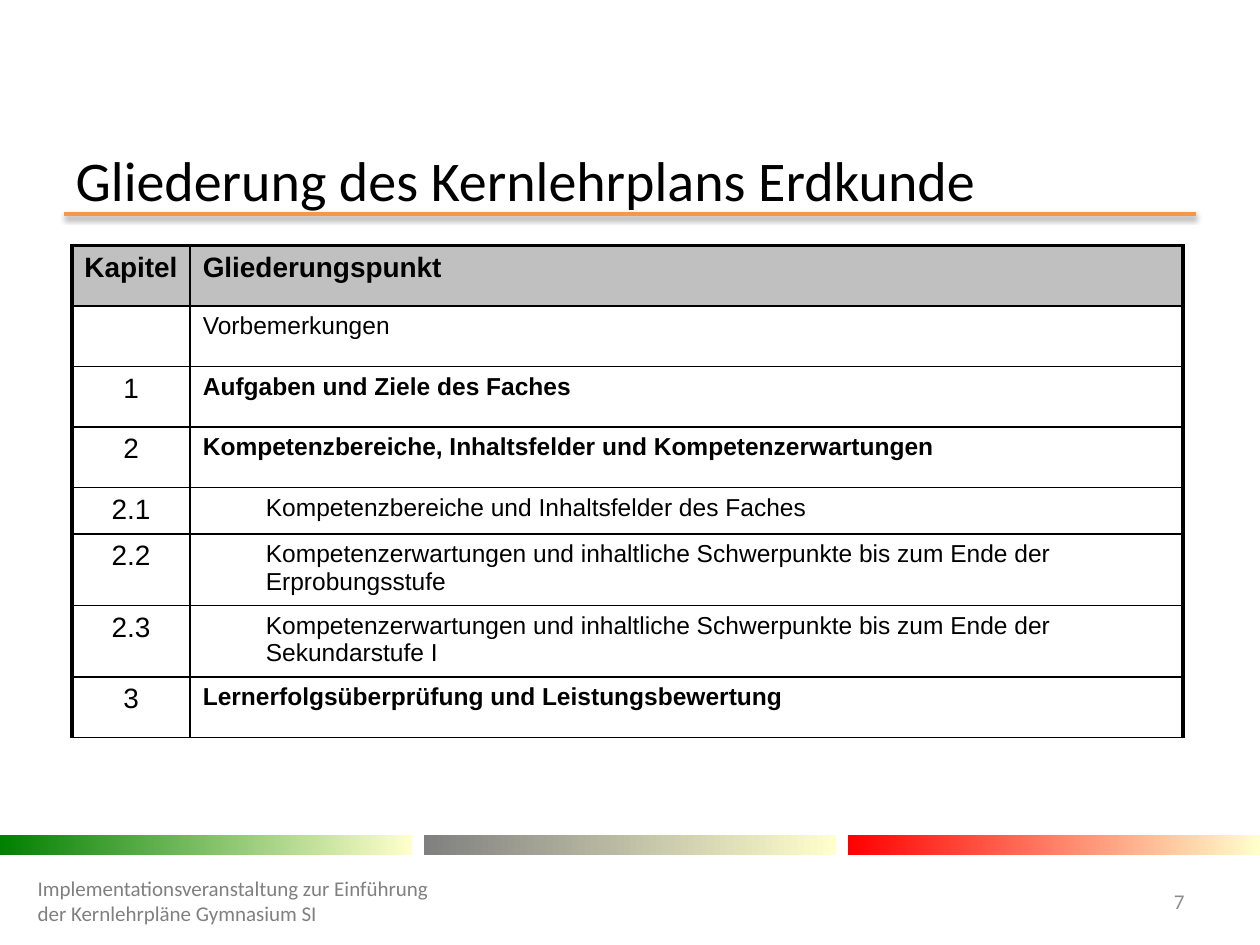
import pptx
import pptx.dml.color
import pptx.enum.shapes
import pptx.enum.text
import pptx.oxml
import pptx.oxml.ns
import pptx.util

Inches = pptx.util.Inches
Pt = pptx.util.Pt
ALIGN = pptx.enum.text.PP_ALIGN
ANCHOR = pptx.enum.text.MSO_ANCHOR

COLORS = {
    "text": "000000", "rule": "F79646", "header": "C0C0C0",
    "footer": "808080", "number": "8C8C8C", "green": "008000",
    "gray": "808080", "red": "FF0000", "cream": "FFFFCC",
}
ROWS = [
    ("Kapitel", "Gliederungspunkt", "header", 0.48),
    ("", "Vorbemerkungen", "plain", 0.48),
    ("1", "Aufgaben und Ziele des Faches", "chapter", 0.48),
    ("2", "Kompetenzbereiche, Inhaltsfelder und Kompetenzerwartungen", "chapter", 0.48),
    ("2.1", "Kompetenzbereiche und Inhaltsfelder des Faches", "section", 0.37),
    ("2.2", "Kompetenzerwartungen und inhaltliche Schwerpunkte bis zum Ende der "
            "Erprobungsstufe", "section", 0.54),
    ("2.3", "Kompetenzerwartungen und inhaltliche Schwerpunkte bis zum Ende der "
            "Sekundarstufe I", "section", 0.54),
    ("3", "Lernerfolgsüberprüfung und Leistungsbewertung", "chapter", 0.48),
]


def rgb(name):
    """Return the named palette colour."""
    return pptx.dml.color.RGBColor.from_string(COLORS[name])


def element(xml):
    """Parse a DrawingML element given without its namespace declaration."""
    declaration = " " + pptx.oxml.ns.nsdecls("a")
    end = min(xml.index(mark) for mark in " />" if mark in xml)
    return pptx.oxml.parse_xml(xml[:end] + declaration + xml[end:])


def write(frame, text, size, color="text", font="Calibri", bold=False, align=ALIGN.LEFT):
    """Write one formatted run into a text frame and return its paragraph."""
    para = frame.paragraphs[0]
    para.alignment = align
    span = para.add_run()
    span.text = text
    span.font.size = Pt(size)
    span.font.name = font
    span.font.bold = bold
    span.font.color.rgb = rgb(color)
    return para


def add_heading(page, left, top, width, height):
    """Place the title and the shadowed rule below it."""
    box = page.shapes.title
    box.left, box.top, box.width, box.height = left, top, width, height
    frame = box.text_frame
    frame.word_wrap = True
    frame.auto_size = pptx.enum.text.MSO_AUTO_SIZE.NONE
    frame.vertical_anchor = ANCHOR.MIDDLE
    write(frame, "Gliederung des Kernlehrplans Erdkunde", 32)
    rule_top = Inches(1.7)
    rule = page.shapes.add_connector(
        pptx.enum.shapes.MSO_CONNECTOR.STRAIGHT,
        left + Inches(0.01), rule_top, left + width - Inches(0.01), rule_top)
    rule.line.color.rgb = rgb("rule")
    rule.line.width = Pt(2)
    rule._element.spPr.append(element(
        f'<a:effectLst><a:outerShdw blurRad="{Pt(3.1)}" dist="{Pt(1.6)}" dir="5400000" '
        'rotWithShape="0"><a:srgbClr val="000000"><a:alpha val="38000"/></a:srgbClr>'
        '</a:outerShdw></a:effectLst>'))


def set_borders(cell, column, row):
    """Draw thick lines on the left, top and right of the table, thin ones elsewhere."""
    widths = {"L": 1 if column else 2.25, "R": 2.25 if column else 1,
              "T": 1 if row else 2.25, "B": 1}
    properties = cell._tc.get_or_add_tcPr()
    for position, (side, width) in enumerate(widths.items()):
        properties.insert(position, element(
            f'<a:ln{side} w="{Pt(width)}"><a:solidFill><a:srgbClr val="{COLORS["text"]}"/>'
            f'</a:solidFill></a:ln{side}>'))


def add_outline(page, left, top, width, height):
    """Place the table of chapters."""
    table = page.shapes.add_table(len(ROWS), 2, left, top, width, height).table
    table.first_row = table.horz_banding = False
    table.columns[0].width = Inches(0.94)
    table.columns[1].width = width - Inches(0.94)
    for row, (chapter, topic, kind, row_height) in enumerate(ROWS):
        table.rows[row].height = Inches(row_height)
        header = kind == "header"
        for column, text in enumerate((chapter, topic)):
            cell = table.cell(row, column)
            if header:
                cell.fill.solid()
                cell.fill.fore_color.rgb = rgb("header")
            else:
                cell.fill.background()
            if header and column == 0:
                cell.margin_right = Inches(0.05)
            set_borders(cell, column, row)
            if not text:
                continue
            size = 16 if header or column == 0 else 14
            bold = header or (kind == "chapter" and column == 1)
            align = ALIGN.CENTER if column == 0 and not header else ALIGN.LEFT
            para = write(cell.text_frame, text, size, font="Arial", bold=bold, align=align)
            if kind == "section" and column == 1:
                para.level = 1
                properties = para._p.get_or_add_pPr()
                properties.set("marL", str(Inches(0.5)))
                properties.set("indent", "0")


def add_bands(page, left, top, width, height):
    """Place three equal gradient bands across the given box."""
    band_width = Inches(3.27)
    step = (width - band_width) / 2
    for position, color in enumerate(("green", "gray", "red")):
        band = page.shapes.add_shape(
            pptx.enum.shapes.MSO_SHAPE.RECTANGLE,
            left + round(position * step), top, band_width, height)
        band.shadow.inherit = False
        band.line.fill.background()
        band.fill.gradient()
        band.fill.gradient_angle = 0
        for stop, name, place in zip(band.fill.gradient_stops, (color, "cream"), (0, 1)):
            stop.color.rgb = rgb(name)
            stop.position = place


def add_footer_text(page, left, top, width, height, text, color, align):
    """Place one footer text, centred vertically in its box."""
    frame = page.shapes.add_textbox(left, top, width, height).text_frame
    frame.word_wrap = True
    frame.vertical_anchor = ANCHOR.MIDDLE
    write(frame, text, 12, color, align=align)


def main():
    """Build and save the slide."""
    deck = pptx.Presentation()
    deck.slide_width, deck.slide_height = Inches(10), Inches(7.5)
    page = deck.slides.add_slide(deck.slide_layouts[5])
    add_heading(page, Inches(0.5), Inches(1.23), Inches(9), Inches(0.39))
    add_bands(page, 0, Inches(6.63), deck.slide_width, Inches(0.16))
    add_footer_text(page, Inches(0.2), Inches(6.95), Inches(3.31), Inches(0.4),
                    "Implementationsveranstaltung zur Einführung der Kernlehrpläne Gymnasium SI",
                    "footer", ALIGN.LEFT)
    add_footer_text(page, Inches(8.86), Inches(6.95), Inches(0.64), Inches(0.4),
                    "7", "number", ALIGN.RIGHT)
    add_outline(page, Inches(0.57), Inches(1.95), Inches(8.82), Inches(3.85))
    deck.save("out.pptx")


if __name__ == "__main__":
    main()
